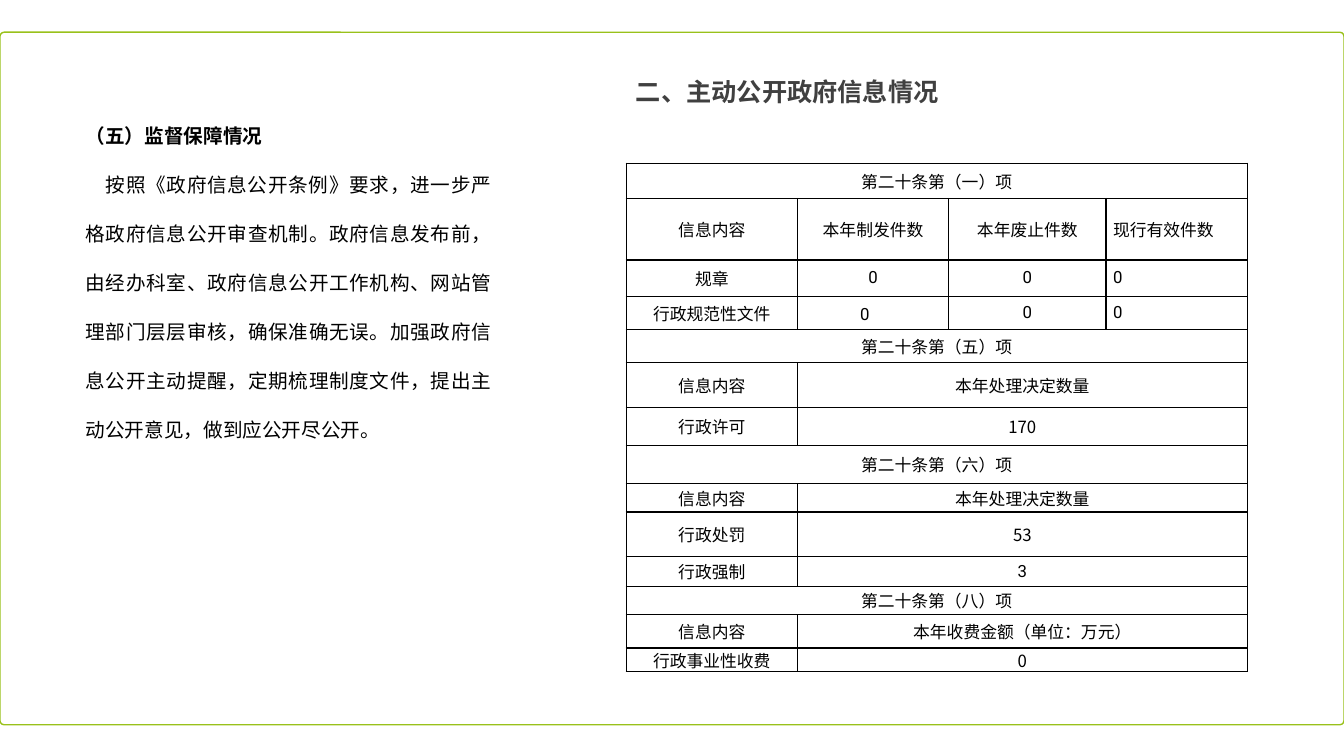
import pptx
import pptx.util
import pptx.oxml
import pptx.oxml.ns
import pptx.dml.color
import pptx.enum.shapes
import pptx.enum.text

Inches, Pt = pptx.util.Inches, pptx.util.Pt
RGBColor = pptx.dml.color.RGBColor
ALIGN = pptx.enum.text.PP_ALIGN
qn = pptx.oxml.ns.qn

WHITE = RGBColor(0xFF, 0xFF, 0xFF)
GREEN = RGBColor(0x99, 0xC1, 0x1B)
BLACK = RGBColor(0x00, 0x00, 0x00)
GREY = RGBColor(0x40, 0x40, 0x40)
CJK_FONT = "Noto Sans CJK SC"
TABLE_FONT = "Roboto"


def write(paragraph, text, size, align, color=BLACK, bold=False, latin=CJK_FONT):
    """Add one run with separate Latin and East Asian fonts."""
    paragraph.alignment = align
    run = paragraph.add_run()
    run.text = text
    for attribute, value in {"size": Pt(size), "bold": bold, "name": latin}.items():
        setattr(run.font, attribute, value)
    run.font.color.rgb = color
    east_asian = pptx.oxml.parse_xml(
        f'<a:ea {pptx.oxml.ns.nsdecls("a")} typeface="{CJK_FONT}"/>')
    run.font._element.find(qn("a:latin")).addnext(east_asian)


presentation = pptx.Presentation()
presentation.slide_width = Inches(13.33)
presentation.slide_height = Inches(7.5)
slide = presentation.slides.add_slide(presentation.slide_layouts[6])

# Green page frame
frame = slide.shapes.add_shape(
    pptx.enum.shapes.MSO_SHAPE.ROUNDED_RECTANGLE,
    Inches(0), Inches(0.32), Inches(13.33), Inches(6.87))
frame.adjustments[0] = 0.006
frame.shadow.inherit = False
frame.fill.solid()
frame.fill.fore_color.rgb = WHITE
frame_color = frame._element.spPr.find(qn("a:solidFill")).find(qn("a:srgbClr"))
frame_color.append(pptx.oxml.parse_xml(
    f'<a:alpha {pptx.oxml.ns.nsdecls("a")} val="90000"/>'))
frame.line.color.rgb = GREEN
frame.line.width = Pt(1)

# Supervision section on the left
supervision = slide.shapes.add_textbox(
    Inches(0.75), Inches(0.93), Inches(4.22), Inches(3.54)).text_frame
supervision.word_wrap = True
supervision_heading = supervision.paragraphs[0]
write(supervision_heading, "（五）监督保障情况", 14, ALIGN.JUSTIFY, bold=True)
supervision_body = supervision.add_paragraph()
write(supervision_body,
      "按照《政府信息公开条例》要求，进一步严格政府信息公开审查机制。"
      "政府信息发布前，由经办科室、政府信息公开工作机构、网站管理部门层层审核，"
      "确保准确无误。加强政府信息公开主动提醒，定期梳理制度文件，"
      "提出主动公开意见，做到应公开尽公开。", 14, ALIGN.JUSTIFY)
supervision_body._p.get_or_add_pPr().set("indent", str(Inches(0.2)))
for paragraph in supervision.paragraphs:
    paragraph.line_spacing = Pt(35)

# Disclosure section on the right
disclosure_title = slide.shapes.add_textbox(
    Inches(6.21), Inches(0.71), Inches(4.87), Inches(0.4)).text_frame
disclosure_title.word_wrap = True
write(disclosure_title.paragraphs[0], "二、主动公开政府信息情况", 18,
      ALIGN.JUSTIFY, GREY, bold=True)

# The last text of a short row spans the remaining columns
disclosure_rows = [
    (0.35, ["第二十条第（一）项"]),
    (0.61, ["信息内容", "本年制发件数", "本年废止件数", "现行有效件数"]),
    (0.36, ["规章", "0", "0", "0"]),
    (0.33, ["行政规范性文件", "0　", "0", "0"]),
    (0.33, ["第二十条第（五）项"]),
    (0.44, ["信息内容", "本年处理决定数量"]),
    (0.38, ["行政许可", "170"]),
    (0.38, ["第二十条第（六）项"]),
    (0.28, ["信息内容", "本年处理决定数量"]),
    (0.44, ["行政处罚", "53"]),
    (0.3, ["行政强制", "3"]),
    (0.28, ["第二十条第（八）项"]),
    (0.33, ["信息内容", "本年收费金额（单位：万元）"]),
    (0.23, ["行政事业性收费", "0"]),
]
column_widths = [1.7, 1.5, 1.56, 1.4]
last_column = len(column_widths) - 1
cjk_digit_rows = {6, 9, 13}

disclosure = slide.shapes.add_table(
    len(disclosure_rows), len(column_widths),
    Inches(6.21), Inches(1.62), Inches(6.16), Inches(5.05)).table
disclosure.first_row = False
disclosure.horz_banding = False
for column, width in zip(disclosure.columns, column_widths):
    column.width = Inches(width)

cell_format = {
    "margin_left": Inches(0.07), "margin_right": Inches(0.07),
    "margin_top": 0, "margin_bottom": 0,
    "vertical_anchor": pptx.enum.text.MSO_ANCHOR.MIDDLE,
}
for row_index, (height, texts) in enumerate(disclosure_rows):
    disclosure.rows[row_index].height = Inches(height)
    for column_index in range(len(column_widths)):
        cell = disclosure.cell(row_index, column_index)
        for attribute, value in cell_format.items():
            setattr(cell, attribute, value)
        for side in ("lnL", "lnR", "lnT", "lnB"):
            cell._tc.get_or_add_tcPr().append(pptx.oxml.parse_xml(
                f'<a:{side} {pptx.oxml.ns.nsdecls("a")} w="{Pt(1)}">'
                f'<a:solidFill><a:srgbClr val="{BLACK}"/></a:solidFill></a:{side}>'))
        cell.fill.background()
    for column_index, text in enumerate(texts):
        cell = disclosure.cell(row_index, column_index)
        if column_index == len(texts) - 1 < last_column:
            cell.merge(disclosure.cell(row_index, last_column))
        align = ALIGN.LEFT if column_index == last_column else ALIGN.CENTER
        is_cjk_digit = row_index in cjk_digit_rows and column_index == 1
        write(cell.text_frame.paragraphs[0], text, 12, align,
              latin=CJK_FONT if is_cjk_digit else TABLE_FONT)

presentation.save("out.pptx")
